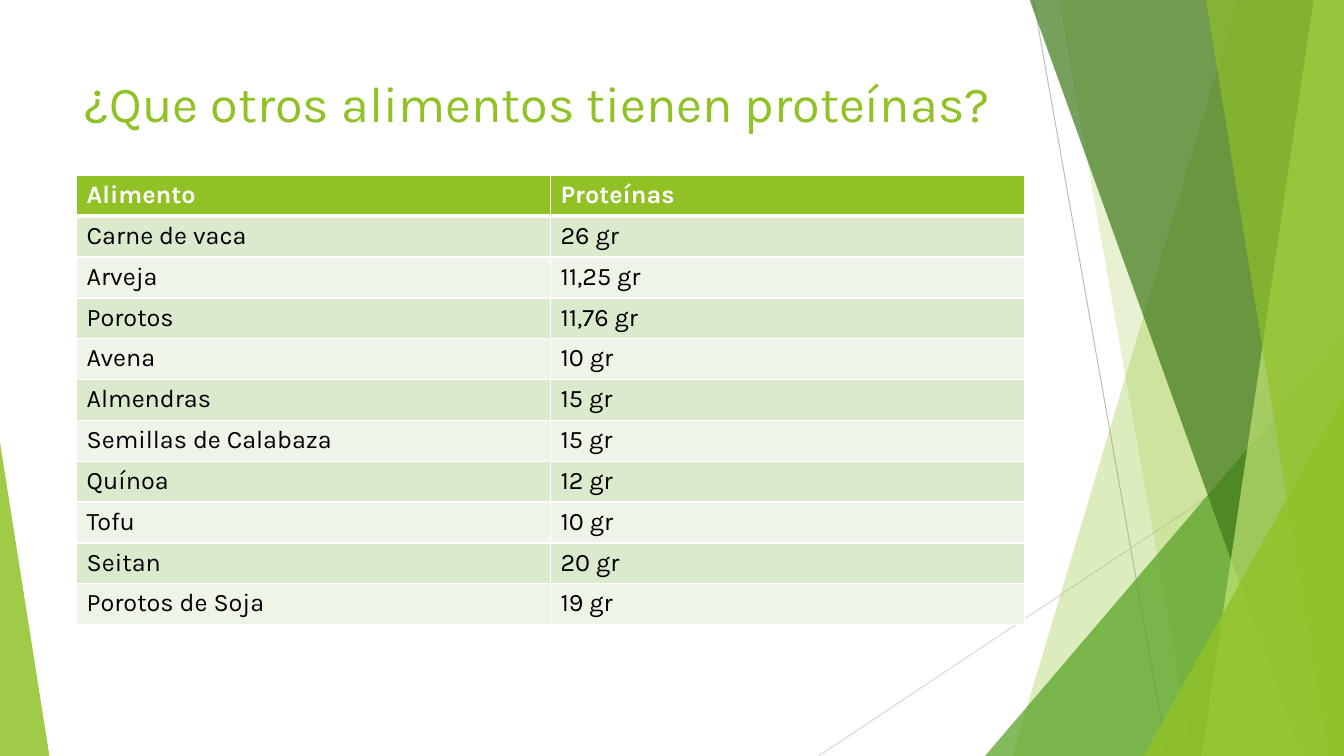
from lxml import etree
from pptx import Presentation
from pptx.dml.color import RGBColor
from pptx.enum.shapes import MSO_CONNECTOR, MSO_SHAPE
from pptx.enum.text import MSO_ANCHOR
from pptx.oxml.ns import qn
from pptx.util import Inches, Pt

STRAIGHT = MSO_CONNECTOR.STRAIGHT
TRIANGLE = MSO_SHAPE.ISOSCELES_TRIANGLE
TOP = MSO_ANCHOR.TOP

WIDTH, HEIGHT = 13.33, 7.5
BAND_TOP = -0.01
FONT = "Karla"
GREEN, WHITE, BLACK = "90C226", "FFFFFF", "000000"
BAND_FILLS = ("DBE9CD", "EEF4E8")
FOODS = [
    ("Alimento", "Proteínas"),
    ("Carne de vaca", "26 gr"),
    ("Arveja", "11,25 gr"),
    ("Porotos", "11,76 gr"),
    ("Avena", "10 gr"),
    ("Almendras", "15 gr"),
    ("Semillas de Calabaza", "15 gr"),
    ("Quínoa", "12 gr"),
    ("Tofu", "10 gr"),
    ("Seitan", "20 gr"),
    ("Porotos de Soja", "19 gr"),
]


def color(hex_code):
    return RGBColor.from_string(hex_code)


def paint(shape, hex_code, opacity):
    """Fill a shape without outline; opacity is a percentage."""
    shape.shadow.inherit = False
    shape.line.fill.background()
    shape.fill.solid()
    shape.fill.fore_color.rgb = color(hex_code)
    tint = shape.fill._xPr.find(f".//{qn('a:srgbClr')}")
    etree.SubElement(tint, qn("a:alpha"), val=str(opacity * 1000))


def add_line(page, start, end, hex_code):
    line = page.shapes.add_connector(STRAIGHT, *map(Inches, start + end))
    line.line.color.rgb = color(hex_code)
    line.line.width = Pt(0.75)
    etree.SubElement(line._element.spPr, qn("a:effectLst"))


def add_band(page, top_left, bottom_left, hex_code, opacity):
    """Draw a full-height band that reaches the right edge of the page."""
    corners = [(WIDTH, BAND_TOP), (WIDTH, HEIGHT), (bottom_left, HEIGHT)]
    builder = page.shapes.build_freeform(Inches(top_left), Inches(BAND_TOP))
    builder.add_line_segments([(Inches(x), Inches(y)) for x, y in corners])
    paint(builder.convert_to_shape(), hex_code, opacity)


def add_corner(page, left, top, width, apex, hex_code, opacity):
    """Draw a triangle standing on the bottom edge; apex is 0 left, 1 right."""
    shape = page.shapes.add_shape(
        TRIANGLE, Inches(left), Inches(top), Inches(width), Inches(HEIGHT - top))
    shape.adjustments[0] = apex
    paint(shape, hex_code, opacity)


def format_text(frame, size, hex_code, bold=False):
    for span in frame.paragraphs[0].runs:
        span.font.name = FONT
        span.font.size = Pt(size)
        span.font.bold = bold
        span.font.color.rgb = color(hex_code)


def add_title(page, text):
    box = page.shapes.add_textbox(Inches(0.74), Inches(0.67), Inches(9.4), Inches(1.44))
    frame = box.text_frame
    frame.word_wrap = True
    frame.vertical_anchor = TOP
    frame.text = text
    format_text(frame, 36, GREEN)


def add_borders(cell, top, bottom):
    properties = cell._tc.get_or_add_tcPr()
    for side, points in (("L", 1), ("R", 1), ("T", top), ("B", bottom)):
        border = etree.SubElement(properties, qn(f"a:ln{side}"), w=str(Pt(points)))
        fill = etree.SubElement(border, qn("a:solidFill"))
        etree.SubElement(fill, qn("a:srgbClr"), val=WHITE)


def add_food_table(page):
    table = page.shapes.add_table(
        len(FOODS), 2, Inches(0.76), Inches(1.74), Inches(9.4), Inches(4.46)).table
    for row, food in enumerate(FOODS):
        header = row == 0
        for column, text in enumerate(food):
            cell = table.cell(row, column)
            add_borders(cell, 3 if row == 1 else 1, 3 if header else 1)
            cell.fill.solid()
            cell.fill.fore_color.rgb = color(GREEN if header else BAND_FILLS[(row - 1) % 2])
            cell.text_frame.text = text
            format_text(cell.text_frame, 18, WHITE if header else BLACK, header)


def add_decoration(page):
    add_line(page, (10.25, 0), (11.58, HEIGHT), "BFBFBF")
    add_line(page, (WIDTH, 4.03), (8.12, HEIGHT), "D9D9D9")
    add_band(page, 12.28, 10.04, GREEN, 30)
    add_band(page, 10.5, 11.83, GREEN, 20)
    add_corner(page, 9.77, 3.33, 3.56, 1, "54A021", 72)
    add_band(page, 10.21, 12.91, "3F7819", 70)
    add_band(page, 13.03, 11.92, "C0E474", 70)
    add_band(page, 11.96, 13.18, GREEN, 65)
    add_corner(page, 11.34, 3.93, 1.99, 1, GREEN, 80)
    add_corner(page, 0, 4.39, 0.49, 0, GREEN, 85)


def main():
    deck = Presentation()
    deck.slide_width, deck.slide_height = Inches(WIDTH), Inches(HEIGHT)
    page = deck.slides.add_slide(deck.slide_layouts[6])
    add_decoration(page)
    add_title(page, "¿Que otros alimentos tienen proteínas?")
    add_food_table(page)
    deck.save("out.pptx")


if __name__ == "__main__":
    main()
